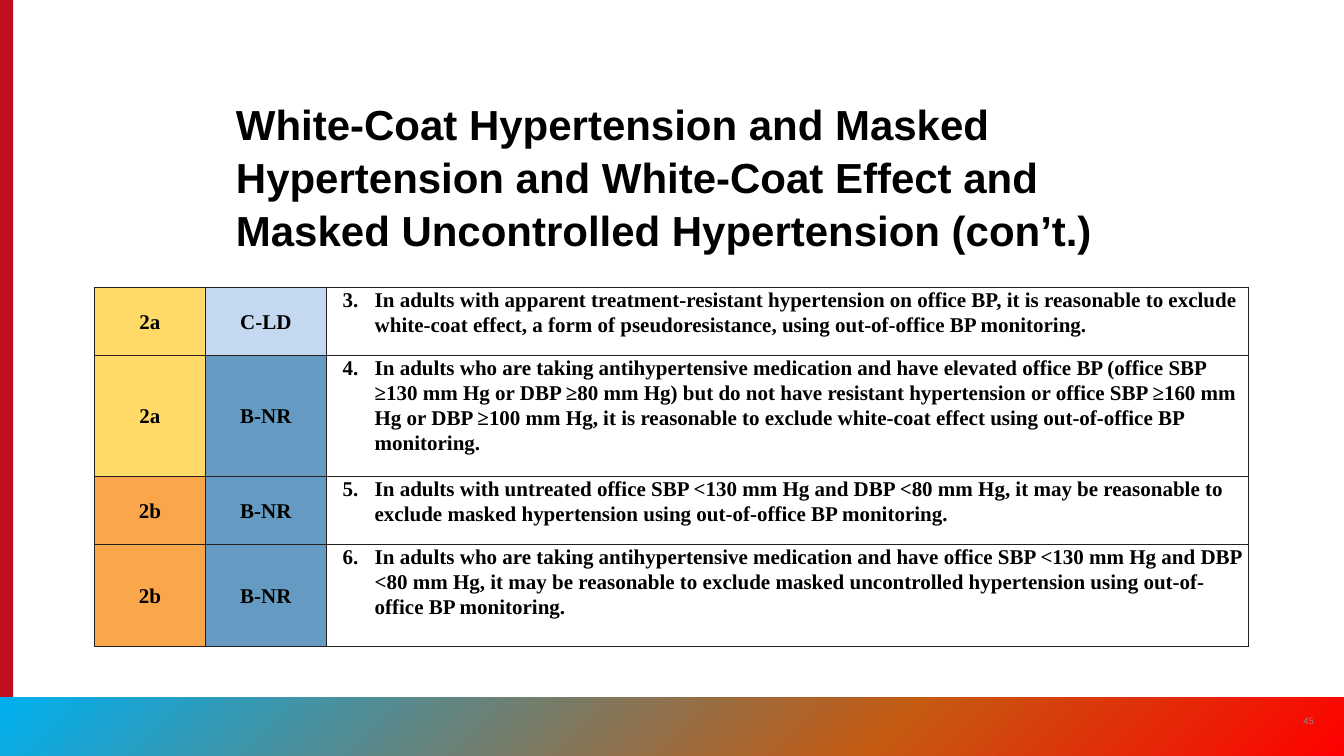
from copy import deepcopy
from dataclasses import dataclass
from lxml import etree
from pptx import Presentation
from pptx.dml.color import RGBColor
from pptx.enum.shapes import MSO_SHAPE
from pptx.enum.text import MSO_ANCHOR, PP_ALIGN
from pptx.oxml.ns import qn
from pptx.util import Cm, Pt

RECT = MSO_SHAPE.RECTANGLE
MIDDLE, BOTTOM = MSO_ANCHOR.MIDDLE, MSO_ANCHOR.BOTTOM
LEFT, CENTER = PP_ALIGN.LEFT, PP_ALIGN.CENTER


@dataclass
class Theme:
    black: str = "000000"
    gray: str = "8A8B8A"
    red: str = "C10E21"
    rule: str = "231F20"
    fade: tuple = ("00B0F0", "C55A11", "FF0000")
    sans: str = "Arial"
    serif: str = "Times New Roman"
    head: int = 36
    body: int = 18
    note: int = 8


theme = Theme()
fills = {"2a": "FFDA68", "2b": "FAA74B", "C-LD": "C4D9F0", "B-NR": "659BC2"}


def style(par, face, size, color, bold, align):
    par.alignment = align
    font = par.font
    font.name, font.size, font.bold = face, Pt(size), bold
    font.color.rgb = RGBColor.from_string(color)


def bar(left, top, width, height):
    box = slide.shapes.add_shape(RECT, Cm(left), Cm(top), Cm(width), Cm(height))
    box.shadow.inherit = False
    box.line.fill.background()
    return box


deck = Presentation()
deck.slide_width, deck.slide_height = Cm(40.64), Cm(22.86)
slide = deck.slides.add_slide(deck.slide_layouts[5])

side = bar(0, 0, 0.4, 22.86)
side.fill.solid()
side.fill.fore_color.rgb = RGBColor.from_string(theme.red)

foot = bar(0, 21.08, 40.64, 1.78)
foot.fill.gradient()
foot.fill.gradient_angle = 315
first = next(foot.element.iter(qn("a:gs")))
first.addnext(deepcopy(first))
for stop, color, place in zip(foot.fill.gradient_stops, theme.fade, (0, 0.66, 1)):
    stop.color.rgb = RGBColor.from_string(color)
    stop.position = place

title = slide.shapes.title
title.left, title.top, title.width, title.height = Cm(6.88), Cm(3), Cm(26.87), Cm(4.83)
frame = title.text_frame
frame.text = (
    "White-Coat Hypertension and Masked Hypertension and White-Coat Effect "
    "and Masked Uncontrolled Hypertension (con’t.)"
)
frame.word_wrap = True
frame.vertical_anchor = BOTTOM
par = frame.paragraphs[0]
par.line_spacing = 1.05
style(par, theme.sans, theme.head, theme.black, True, LEFT)

rows = [
    ("2a", "C-LD", "In adults with apparent treatment-resistant hypertension on office BP, "
     "it is reasonable to exclude white-coat effect, a form of pseudoresistance, "
     "using out-of-office BP monitoring."),
    ("2a", "B-NR", "In adults who are taking antihypertensive medication and have elevated "
     "office BP (office SBP ≥130 mm Hg or DBP ≥80 mm Hg) but do not have resistant "
     "hypertension or office SBP ≥160 mm Hg or DBP ≥100 mm Hg, it is reasonable to "
     "exclude white-coat effect using out-of-office BP monitoring."),
    ("2b", "B-NR", "In adults with untreated office SBP <130 mm Hg and DBP <80 mm Hg, "
     "it may be reasonable to exclude masked hypertension using out-of-office BP monitoring."),
    ("2b", "B-NR", "In adults who are taking antihypertensive medication and have office "
     "SBP <130 mm Hg and DBP <80 mm Hg, it may be reasonable to exclude masked "
     "uncontrolled hypertension using out-of-office BP monitoring."),
]
widths = (3.33, 3.68, 27.86)
heights = (2.06, 3.66, 2.06, 3.1)
table = slide.shapes.add_table(
    len(rows), len(widths), Cm(2.87), Cm(8.68), Cm(sum(widths)), Cm(sum(heights))
).table
for col, width in zip(table.columns, widths):
    col.width = Cm(width)
for row, height in zip(table.rows, heights):
    row.height = Cm(height)

for r, row in enumerate(rows):
    for c, text in enumerate(row):
        cell = table.cell(r, c)
        cell.text = text
        cell.margin_left = cell.margin_right = cell.margin_top = cell.margin_bottom = 0
        par = cell.text_frame.paragraphs[0]
        par.line_spacing = 1.07
        par.space_after = Pt(8)
        if text in fills:
            cell.vertical_anchor = MIDDLE
            cell.fill.solid()
            cell.fill.fore_color.rgb = RGBColor.from_string(fills[text])
        else:
            cell.fill.background()
            props = par._p.get_or_add_pPr()
            props.set("marL", str(Cm(1.45)))
            props.set("indent", str(Cm(-0.97)))
            etree.SubElement(
                props, qn("a:buAutoNum"), type="arabicPeriod", startAt=str(r + 3)
            )
        style(par, theme.serif, theme.body, theme.black, True,
              CENTER if text in fills else LEFT)
        props = cell._tc.get_or_add_tcPr()
        for spot, edge in enumerate(("a:lnL", "a:lnR", "a:lnT", "a:lnB")):
            line = etree.Element(qn(edge), w=str(Pt(1)))
            paint = etree.SubElement(line, qn("a:solidFill"))
            etree.SubElement(paint, qn("a:srgbClr"), val=theme.rule)
            props.insert(spot, line)

page = slide.shapes.add_textbox(Cm(38.96), Cm(21.18), Cm(1.22), Cm(1.22))
frame = page.text_frame
frame.text = "45"
frame.word_wrap = True
frame.vertical_anchor = MIDDLE
style(frame.paragraphs[0], theme.sans, theme.note, theme.gray, False, CENTER)

deck.save("out.pptx")
